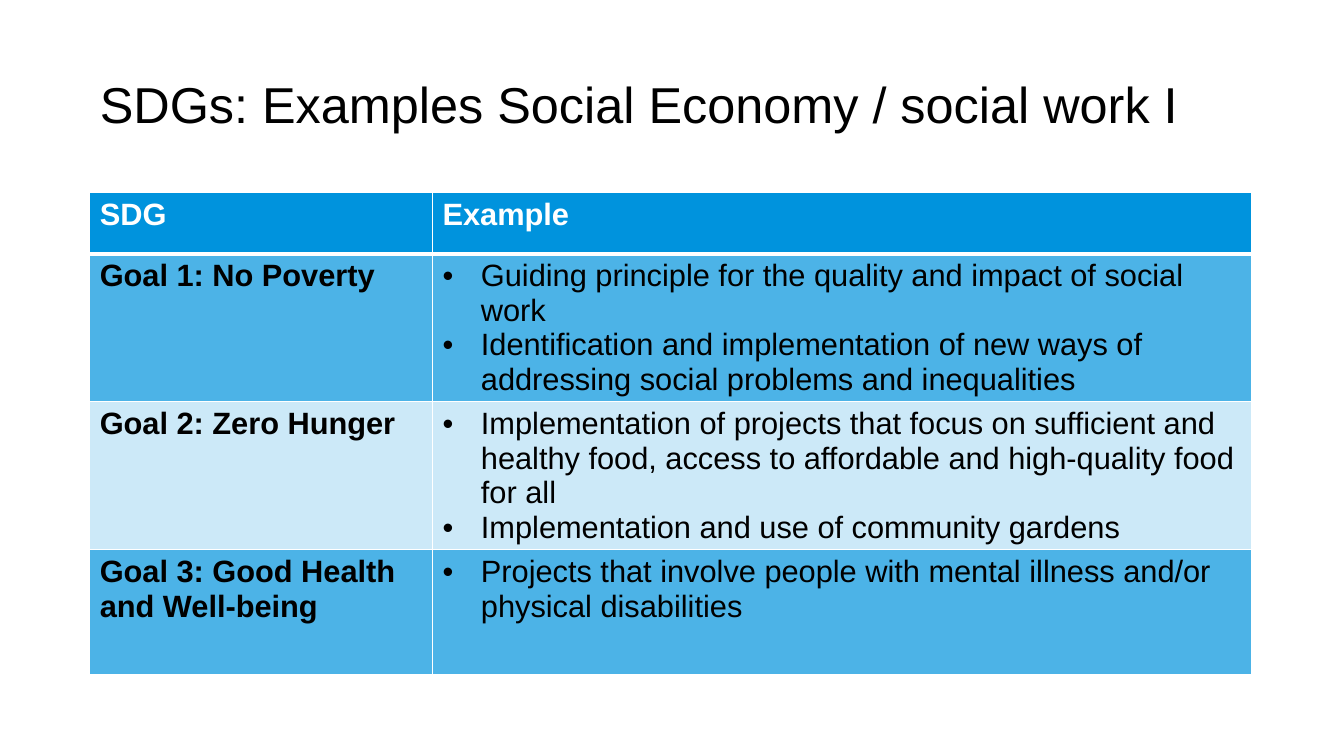
import pptx
import pptx.dml.color
import pptx.enum.text
import pptx.oxml
import pptx.oxml.ns
import pptx.util
from pptx.util import Inches

BLUE = pptx.dml.color.RGBColor(0x00, 0x93, 0xDD)
WHITE = pptx.dml.color.RGBColor(0xFF, 0xFF, 0xFF)
BLACK = pptx.dml.color.RGBColor(0x00, 0x00, 0x00)
FONT = "Arial"

HEADERS = ["SDG", "Example"]
GOALS = [
    ("Goal 1: No Poverty",
     ["Guiding principle for the quality and impact of social work",
      "Identification and implementation of new ways of addressing social "
      "problems and inequalities"]),
    ("Goal 2: Zero Hunger",
     ["Implementation of projects that focus on sufficient and healthy food, "
      "access to affordable and high-quality food for all",
      "Implementation and use of community gardens"]),
    ("Goal 3: Good Health and Well-being",
     ["Projects that involve people with mental illness and/or physical "
      "disabilities"]),
]


def add_run(p, text, size, color, bold=False):
    r = p.add_run()
    r.text = text
    r.font.name = FONT
    r.font.size = pptx.util.Pt(size)
    r.font.bold = bold
    r.font.color.rgb = color


def add_bullet(p):
    pPr = p._p.get_or_add_pPr()
    pPr.set("marL", str(Inches(0.38)))
    pPr.set("indent", str(-Inches(0.38)))
    for tag, key, value in (("buFont", "typeface", FONT), ("buChar", "char", "•")):
        pPr.append(pptx.oxml.parse_xml(
            f'<a:{tag} {pptx.oxml.ns.nsdecls("a")} {key}="{value}"/>'))


def set_borders(cell, top=1, bottom=1):
    """Draw white borders, with top and bottom widths in points."""
    tcPr = cell._tc.get_or_add_tcPr()
    widths = {"lnL": 1, "lnR": 1, "lnT": top, "lnB": bottom}
    for i, (tag, width) in enumerate(widths.items()):
        tcPr.insert(i, pptx.oxml.parse_xml(
            f'<a:{tag} {pptx.oxml.ns.nsdecls("a")} w="{pptx.util.Pt(width)}">'
            f'<a:solidFill><a:srgbClr val="{WHITE}"/></a:solidFill></a:{tag}>'))


def set_fill(cell, opacity=100):
    cell.fill.solid()
    cell.fill.fore_color.rgb = BLUE
    if opacity < 100:
        color = cell._tc.tcPr.find(".//" + pptx.oxml.ns.qn("a:srgbClr"))
        color.append(pptx.oxml.parse_xml(
            f'<a:alpha {pptx.oxml.ns.nsdecls("a")} val="{opacity * 1000}"/>'))


def fill_cell(cell, lines, color, bold=False, bullets=False):
    tf = cell.text_frame
    for i, line in enumerate(lines):
        p = tf.add_paragraph() if i else tf.paragraphs[0]
        if bullets:
            add_bullet(p)
        add_run(p, line, 22, color, bold)


def add_title(s, text):
    title = s.shapes.title
    title.left, title.top = Inches(0.89), Inches(0.34)
    title.width, title.height = Inches(11.17), Inches(1.45)
    tf = title.text_frame
    tf.word_wrap = True
    tf.vertical_anchor = pptx.enum.text.MSO_ANCHOR.MIDDLE
    p = tf.paragraphs[0]
    p.alignment = pptx.enum.text.PP_ALIGN.LEFT
    p.line_spacing = 0.9
    add_run(p, text, 36, BLACK)


def add_goal_table(s):
    table = s.shapes.add_table(len(GOALS) + 1, len(HEADERS), Inches(0.89),
                               Inches(1.91), Inches(11.52), Inches(4.33)).table
    for column, width in zip(table.columns, (3.4, 8.12)):
        column.width = Inches(width)
    for i, row in enumerate(table.rows):
        row.height = Inches(1.24 if i else 0.61)

    for j, header in enumerate(HEADERS):
        cell = table.cell(0, j)
        fill_cell(cell, [header], WHITE, bold=True)
        set_fill(cell)
        set_borders(cell, bottom=3)

    for i, (goal, examples) in enumerate(GOALS, start=1):
        fill_cell(table.cell(i, 0), [goal], BLACK, bold=True)
        fill_cell(table.cell(i, 1), examples, BLACK, bullets=True)
        for cell in table.rows[i].cells:
            set_fill(cell, 70 if i % 2 else 20)
            set_borders(cell, top=3 if i == 1 else 1)


def main():
    prs = pptx.Presentation()
    prs.slide_width, prs.slide_height = Inches(13.33), Inches(7.5)
    s = prs.slides.add_slide(prs.slide_layouts.get_by_name("Title Only"))
    add_title(s, "SDGs: Examples Social Economy / social work I")
    add_goal_table(s)
    prs.save("out.pptx")


if __name__ == "__main__":
    main()
